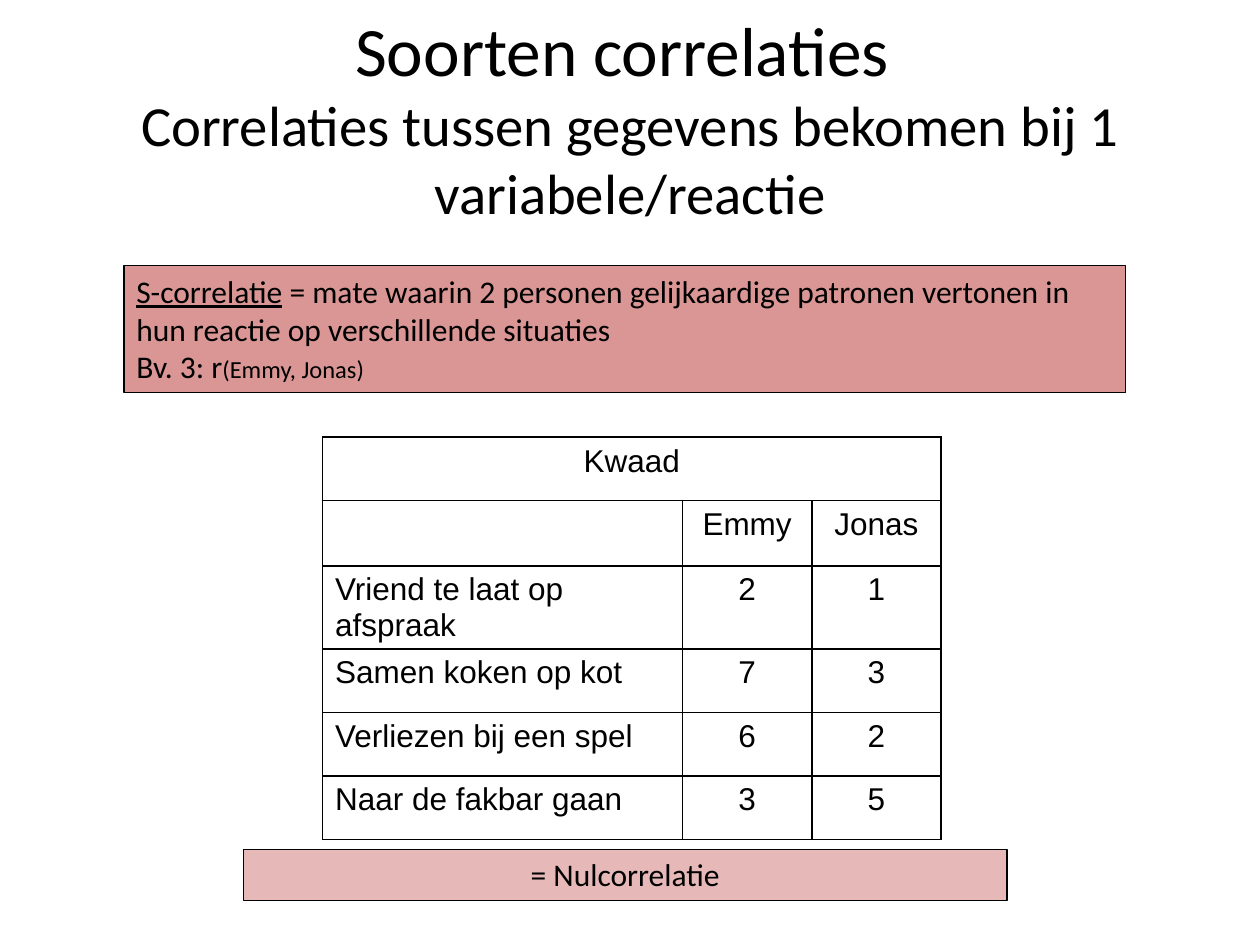
from dataclasses import dataclass

from lxml.etree import SubElement
from pptx import Presentation
from pptx.dml.color import RGBColor
from pptx.enum.shapes import MSO_SHAPE
from pptx.enum.text import MSO_ANCHOR, MSO_AUTO_SIZE, PP_ALIGN
from pptx.oxml.ns import qn
from pptx.util import Pt

BLACK = RGBColor(0x00, 0x00, 0x00)
ROSE = RGBColor(0xD9, 0x96, 0x94)
LIGHT_ROSE = RGBColor(0xE6, 0xB9, 0xB8)


@dataclass
class Span:
    text: str
    size: float = 18
    underline: bool = False


@dataclass
class Banner:
    left: float
    top: float
    width: float
    height: float
    color: RGBColor
    align: PP_ALIGN
    paragraphs: list[list[Span]]


TITLE = [
    Span("Soorten correlaties ", 39.6),
    Span("Correlaties tussen gegevens bekomen bij 1 variabele/reactie", 32.4),
]
BANNERS = [
    Banner(70.8, 151.8, 572.4, 72.7, ROSE, PP_ALIGN.LEFT, [
        [
            Span("S-correlatie", underline=True),
            Span(" = mate waarin 2 personen gelijkaardige patronen vertonen in "
                 "hun reactie op verschillende situaties"),
        ],
        [Span("Bv. 3: r"), Span("(Emmy, Jonas)", 14)],
    ]),
    Banner(139, 485.3, 436.5, 29.1, LIGHT_ROSE, PP_ALIGN.CENTER,
           [[Span("= Nulcorrelatie")]]),
]
ROWS = [
    ("Kwaad", "", ""),
    ("", "Emmy", "Jonas"),
    ("Vriend te laat op afspraak", "2", "1"),
    ("Samen koken op kot", "7", "3"),
    ("Verliezen bij een spel", "6", "2"),
    ("Naar de fakbar gaan", "3", "5"),
]
COLUMN_WIDTHS = [205.7, 73.9, 73.9]
ROW_HEIGHTS = [36.3, 37.3, 36.3, 36.3, 36.3, 36.3]
HEADER_ROWS = 2


def format_font(font, name: str, size: float) -> None:
    font.name = name
    font.size = Pt(size)
    font.color.rgb = BLACK


def fill_title(title) -> None:
    title.left, title.top, title.width, title.height = Pt(36), Pt(21.6), Pt(648), Pt(90)
    frame = title.text_frame
    frame.auto_size = MSO_AUTO_SIZE.NONE
    frame.vertical_anchor = MSO_ANCHOR.MIDDLE
    para = frame.paragraphs[0]
    para.text = "\v".join(span.text for span in TITLE)
    para.alignment = PP_ALIGN.CENTER
    for run, span in zip(para.runs, TITLE):
        format_font(run.font, "Calibri", span.size)
    line_break = para._p.find(qn("a:br"))
    SubElement(line_break, qn("a:rPr"), sz=str(round(TITLE[0].size * 100)))


def draw_banner(page, banner: Banner) -> None:
    box = page.shapes.add_shape(
        MSO_SHAPE.RECTANGLE, Pt(banner.left), Pt(banner.top),
        Pt(banner.width), Pt(banner.height))
    box.shadow.inherit = False
    box.fill.solid()
    box.fill.fore_color.rgb = banner.color
    box.line.color.rgb = BLACK
    box.line.width = Pt(0.75)
    frame = box.text_frame
    frame.word_wrap = True
    frame.auto_size = MSO_AUTO_SIZE.SHAPE_TO_FIT_TEXT
    frame.vertical_anchor = MSO_ANCHOR.TOP
    for index, spans in enumerate(banner.paragraphs):
        para = frame.add_paragraph() if index else frame.paragraphs[0]
        para.alignment = banner.align
        for span in spans:
            run = para.add_run()
            run.text = span.text
            format_font(run.font, "Calibri", span.size)
            run.font.underline = span.underline


def draw_borders(cell) -> None:
    properties = cell._tc.get_or_add_tcPr()
    for position, side in enumerate(("lnL", "lnR", "lnT", "lnB")):
        line = properties.makeelement(qn(f"a:{side}"), {"w": str(Pt(1))})
        fill = SubElement(line, qn("a:solidFill"))
        SubElement(fill, qn("a:srgbClr"), val=str(BLACK))
        properties.insert(position, line)


def draw_table(page) -> None:
    table = page.shapes.add_table(
        len(ROWS), len(COLUMN_WIDTHS), Pt(184.3), Pt(249.8),
        Pt(sum(COLUMN_WIDTHS)), Pt(sum(ROW_HEIGHTS))).table
    table.first_row = False
    table.horz_banding = False
    for column, width in zip(table.columns, COLUMN_WIDTHS):
        column.width = Pt(width)
    for row, height in zip(table.rows, ROW_HEIGHTS):
        row.height = Pt(height)
    table.cell(0, 0).merge(table.cell(0, len(COLUMN_WIDTHS) - 1))
    for row_index, texts in enumerate(ROWS):
        for column_index, text in enumerate(texts):
            cell = table.cell(row_index, column_index)
            cell.fill.background()
            draw_borders(cell)
            para = cell.text_frame.paragraphs[0]
            para.text = text
            centred = row_index < HEADER_ROWS or column_index > 0
            para.alignment = PP_ALIGN.CENTER if centred else PP_ALIGN.LEFT
            for run in para.runs:
                format_font(run.font, "Arial", 18)


def main() -> None:
    deck = Presentation()
    deck.slide_width, deck.slide_height = Pt(720), Pt(540)
    page = deck.slides.add_slide(deck.slide_layouts[5])
    fill_title(page.shapes.title)
    draw_table(page)
    for banner in BANNERS:
        draw_banner(page, banner)
    deck.save("out.pptx")


if __name__ == "__main__":
    main()
